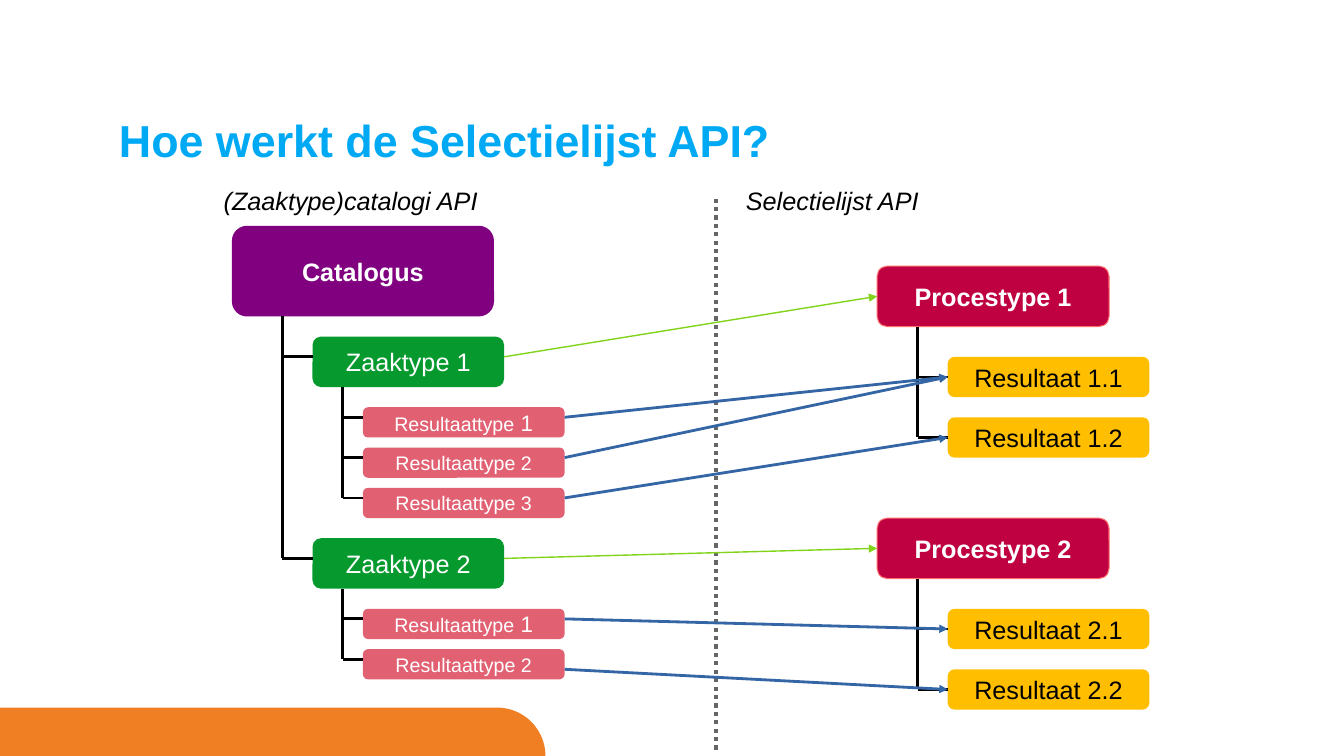
from dataclasses import dataclass
from math import cos, pi, sin

from lxml import etree
from pptx import Presentation
from pptx.dml.color import RGBColor
from pptx.enum.dml import MSO_LINE
from pptx.enum.shapes import MSO_CONNECTOR, MSO_SHAPE
from pptx.enum.text import MSO_ANCHOR, MSO_AUTO_SIZE, PP_ALIGN
from pptx.oxml.ns import qn
from pptx.util import Inches, Pt

ROUNDED = MSO_SHAPE.ROUNDED_RECTANGLE
STRAIGHT = MSO_CONNECTOR.STRAIGHT
DOTTED = MSO_LINE.ROUND_DOT
TOP, MIDDLE = MSO_ANCHOR.TOP, MSO_ANCHOR.MIDDLE
LEFT, CENTER = PP_ALIGN.LEFT, PP_ALIGN.CENTER
NO_AUTOFIT = MSO_AUTO_SIZE.NONE
TITLE_ONLY = 5

# The diagram stands on a grid of 0.1 inch, shifted slightly down
CELL = 0.1
ROW_SHIFT = 0.04


@dataclass(frozen=True)
class Theme:
    font: str = "Arial"
    title: str = "00A9F3"
    footer: str = "F07E23"
    catalogue: str = "800080"
    case: str = "069A2E"
    result_type: str = "E16173"
    process: str = "BF0041"
    process_edge: str = "FF6D6D"
    result: str = "FFBF00"
    divider: str = "666666"
    case_arrow: str = "81D41A"
    result_arrow: str = "3465A4"
    white: str = "FFFFFF"
    black: str = "000000"
    title_size: int = 32
    label_size: int = 18
    digit_size: int = 16
    small_size: int = 14
    hairline: float = 0


THEME = Theme()


@dataclass(frozen=True)
class Node:
    """A box of the diagram, in grid columns and rows."""
    col: int
    row: int
    width: int
    height: int

    @property
    def port_row(self):
        return self.row + self.height // 2

    @property
    def right(self):
        return self.col + self.width

    @property
    def bottom(self):
        return self.row + self.height


def x_at(col):
    return Inches(col * CELL)


def y_at(row):
    return Inches(row * CELL + ROW_SHIFT)


def rgb(code):
    return RGBColor.from_string(code)


def write(frame, runs, size=THEME.label_size, color=THEME.black, bold=False,
          italic=False, align=LEFT, anchor=TOP, wrap=True, spacing=None):
    """Fill a text frame; runs is a string or a list of (text, size)."""
    frame.word_wrap = wrap
    frame.vertical_anchor = anchor
    paragraph = frame.paragraphs[0]
    paragraph.alignment = align
    if spacing:
        paragraph.line_spacing = spacing
    for text, run_size in [(runs, size)] if isinstance(runs, str) else runs:
        run = paragraph.add_run()
        run.text = text
        font = run.font
        font.name, font.size = THEME.font, Pt(run_size)
        font.bold, font.italic = bold, italic
        font.color.rgb = rgb(color)


def add_title(slide, text):
    title = slide.shapes.title
    title.left, title.top = Inches(1.18), Inches(1.18)
    title.width, title.height = Inches(10.97), Inches(0.79)
    frame = title.text_frame
    frame.auto_size = NO_AUTOFIT
    frame.margin_left = frame.margin_right = 0
    frame.margin_top = frame.margin_bottom = 0
    write(frame, text, size=THEME.title_size, color=THEME.title, bold=True,
          spacing=0.9)


def add_heading(slide, text, left, width):
    heading = slide.shapes.add_textbox(
        Inches(left), Inches(1.79), Inches(width), Inches(0.4))
    write(heading.text_frame, text, italic=True)


def add_footer(slide, right=5.41, top=7.02, bottom=7.5):
    """Orange band whose top right corner is a quarter circle."""
    radius = bottom - top
    angles = [pi / 2 * (1 - step / 24) for step in range(25)]
    arc = [(right - radius + radius * cos(a), bottom - radius * sin(a))
           for a in angles]
    outline = slide.shapes.build_freeform(0, Inches(bottom))
    outline.add_line_segments(
        [(Inches(x), Inches(y)) for x, y in [(0, top)] + arc], close=True)
    band = outline.convert_to_shape()
    band.shadow.inherit = False
    band.fill.solid()
    band.fill.fore_color.rgb = rgb(THEME.footer)
    band.line.fill.background()


def add_node(slide, node, runs, fill, edge=None, color=THEME.white, bold=False):
    box = slide.shapes.add_shape(
        ROUNDED, x_at(node.col), y_at(node.row),
        Inches(node.width * CELL), Inches(node.height * CELL))
    box.shadow.inherit = False
    box.fill.solid()
    box.fill.fore_color.rgb = rgb(fill)
    if edge:
        box.line.color.rgb = rgb(edge)
        box.line.width = Pt(0.75)
    else:
        box.line.fill.background()
    write(box.text_frame, runs, color=color, bold=bold, align=CENTER,
          anchor=MIDDLE, wrap=False)
    return node


def add_line(slide, start, end, color=THEME.black, width=THEME.hairline,
             dash=None, arrow=False):
    """Draw a line between two (column, row) points."""
    line = slide.shapes.add_connector(
        STRAIGHT, x_at(start[0]), y_at(start[1]), x_at(end[0]), y_at(end[1]))
    line.line.color.rgb = rgb(color)
    line.line.width = Pt(width)
    if dash:
        line.line.dash_style = dash
    if arrow:
        etree.SubElement(line.line._get_or_add_ln(), qn("a:tailEnd"),
                         type="triangle")
    etree.SubElement(line._element.spPr, qn("a:effectLst"))


def add_branches(slide, parent, children, indent):
    """Join a parent to its children with a trunk and side branches."""
    trunk = parent.col + indent
    add_line(slide, (trunk, parent.bottom), (trunk, children[-1].port_row))
    for child in children:
        add_line(slide, (trunk, child.port_row), (child.col, child.port_row))


def add_link(slide, source, target, color, width=THEME.hairline, drop=0):
    add_line(slide, (source.right, source.port_row + drop),
             (target.col, target.port_row), color, width, arrow=True)


def add_case(slide, number, row, result_count):
    case = add_node(slide, Node(31, row, 19, 5), f"Zaaktype {number}", THEME.case)
    types = []
    for index in range(result_count):
        digit_size = THEME.small_size if index else THEME.digit_size
        types.append(add_node(
            slide, Node(36, row + 7 + 4 * index, 20, 3),
            [("Resultaattype", THEME.small_size), (f" {index + 1}", digit_size)],
            THEME.result_type))
    add_branches(slide, case, types, 3)
    return case, types


def add_process(slide, number, row):
    process = add_node(slide, Node(87, row, 23, 6), f"Procestype {number}",
                       THEME.process, edge=THEME.process_edge, bold=True)
    results = [add_node(slide, Node(94, row + 9 + 6 * index, 20, 4),
                        f"Resultaat {number}.{index + 1}", THEME.result,
                        color=THEME.black)
               for index in range(2)]
    add_branches(slide, process, results, 4)
    return process, results


def main():
    deck = Presentation()
    deck.slide_width, deck.slide_height = Inches(13.33), Inches(7.5)
    slide = deck.slides.add_slide(deck.slide_layouts[TITLE_ONLY])
    add_footer(slide)
    add_title(slide, "Hoe werkt de Selectielijst API?")

    # Left: the catalogue with its case types
    add_heading(slide, "(Zaaktype)catalogi API", 2.12, 3)
    catalogue = add_node(slide, Node(23, 22, 26, 9), "Catalogus",
                         THEME.catalogue, bold=True)
    case_1, types_1 = add_case(slide, 1, 33, 3)
    case_2, types_2 = add_case(slide, 2, 53, 2)
    add_branches(slide, catalogue, [case_1, case_2], 5)

    # Right: the selection list with its process types
    add_heading(slide, "Selectielijst API", 7.3, 3.2)
    process_1, results_1 = add_process(slide, 1, 26)
    process_2, results_2 = add_process(slide, 2, 51)
    add_line(slide, (71, 19.3), (71, 74), THEME.divider, 3, dash=DOTTED)

    # Links from the catalogue to the selection list
    for case, process in ((case_1, process_1), (case_2, process_2)):
        add_link(slide, case, process, THEME.case_arrow, width=1)
    for source, target, drop in (
            (types_1[0], results_1[0], 0), (types_1[1], results_1[0], 0),
            (types_1[2], results_1[1], 0), (types_2[0], results_2[0], 0),
            (types_2[1], results_2[1], 1)):
        add_link(slide, source, target, THEME.result_arrow, drop=drop)

    deck.save("out.pptx")


if __name__ == "__main__":
    main()
